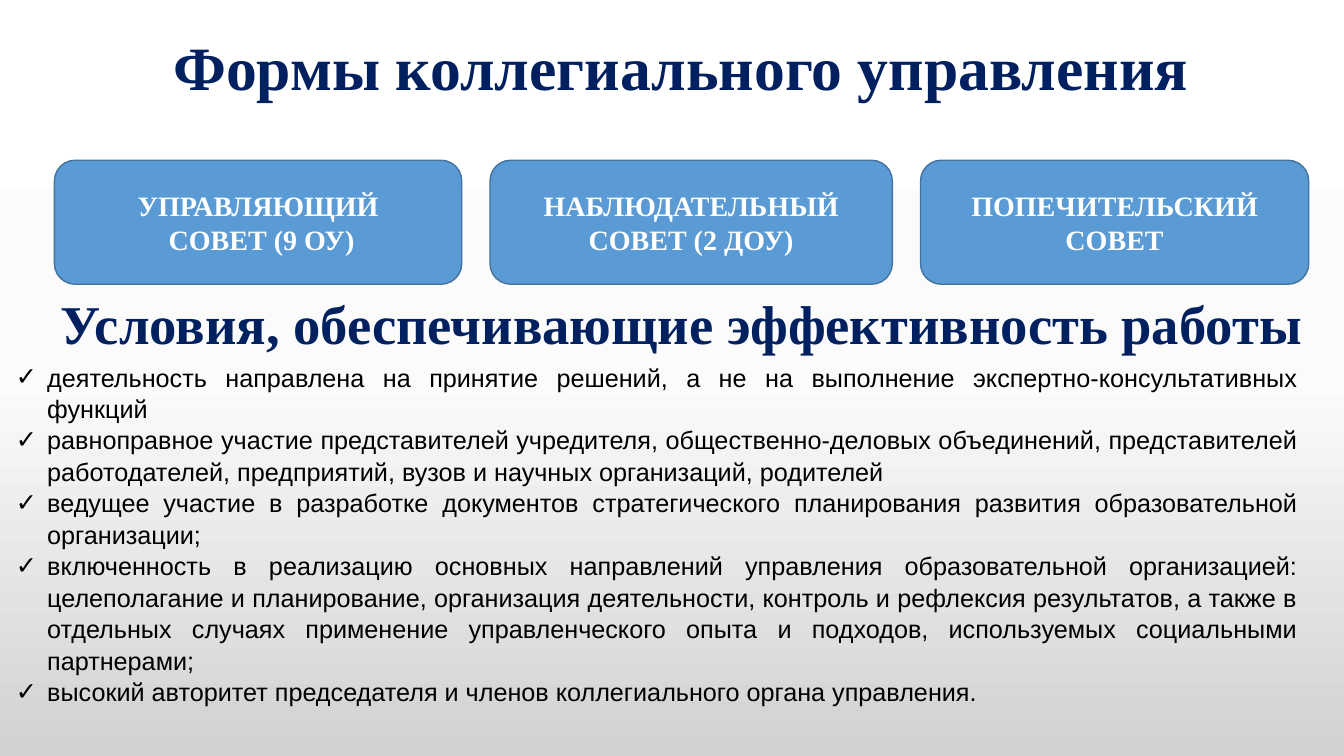
from copy import deepcopy

from lxml.etree import SubElement
from pptx import Presentation
from pptx.dml.color import RGBColor
from pptx.enum.shapes import MSO_SHAPE
from pptx.enum.text import MSO_ANCHOR, PP_ALIGN
from pptx.oxml.ns import qn
from pptx.util import Inches, Pt

COLORS = {
    "navy": "002060",
    "blue": "5B9BD5",
    "outline": "43739E",
    "white": "FFFFFF",
    "black": "000000",
}
BACKGROUND_STOPS = [(0, "FFFFFF"), (0.5, "FBFBFB"), (1, "D1D1D1")]
HEADINGS = [
    ("Формы коллегиального управления", 44, (1.01, 0.12, 11.49, 1.17), MSO_ANCHOR.MIDDLE),
    ("Условия, обеспечивающие эффективность работы", 39, (0.18, 2.95, 13.16, 1.17), MSO_ANCHOR.TOP),
]
COUNCILS = [
    (0.54, 4.04, ["УПРАВЛЯЮЩИЙ", " СОВЕТ (9 ОУ)"]),
    (4.86, 3.99, ["НАБЛЮДАТЕЛЬНЫЙ СОВЕТ (2 ДОУ)"]),
    (9.13, 3.85, ["ПОПЕЧИТЕЛЬСКИЙ", "СОВЕТ"]),
]
CONDITIONS = [
    "деятельность направлена на принятие решений, а не на выполнение "
    "экспертно-консультативных функций",
    "равноправное участие представителей учредителя, общественно-деловых объединений, "
    "представителей работодателей, предприятий, вузов и научных организаций, родителей",
    "ведущее участие в разработке документов стратегического планирования развития "
    "образовательной организации;",
    "включенность в реализацию основных направлений управления образовательной "
    "организацией: целеполагание и планирование, организация деятельности, контроль и "
    "рефлексия результатов, а также в отдельных случаях применение управленческого опыта "
    "и подходов, используемых социальными партнерами;",
    "высокий авторитет председателя и членов коллегиального органа управления.",
]


def write_paragraphs(frame, lines, font_format, color, paragraph_format):
    """Fill a text frame with one formatted paragraph per line."""
    frame.word_wrap = True
    for index, line in enumerate(lines):
        paragraph = frame.paragraphs[0] if index == 0 else frame.add_paragraph()
        for name, value in paragraph_format.items():
            setattr(paragraph, name, value)
        run = paragraph.add_run()
        run.text = line
        for name, value in font_format.items():
            setattr(run.font, name, value)
        run.font.color.rgb = RGBColor.from_string(COLORS[color])


presentation = Presentation()
presentation.slide_width = Inches(13.33)
presentation.slide_height = Inches(7.5)
slide = presentation.slides.add_slide(presentation.slide_layouts[6])

# Background gradient from top to bottom
background = slide.background.fill
background.gradient()
background.gradient_angle = 270
stop_list = slide.element.find(".//" + qn("a:gsLst"))
stop_list.append(deepcopy(stop_list[0]))
for stop, (position, color) in zip(background.gradient_stops, BACKGROUND_STOPS):
    stop.position = position
    stop.color.rgb = RGBColor.from_string(color)

# Headings
for text, size, box, anchor in HEADINGS:
    frame = slide.shapes.add_textbox(*map(Inches, box)).text_frame
    frame.vertical_anchor = anchor
    frame.margin_top = frame.margin_bottom = 0
    write_paragraphs(
        frame, [text], {"name": "Times New Roman", "size": Pt(size), "bold": True}, "navy",
        {"alignment": PP_ALIGN.CENTER, "line_spacing": 0.9},
    )

# Council boxes
for left, width, lines in COUNCILS:
    shape = slide.shapes.add_shape(
        MSO_SHAPE.ROUNDED_RECTANGLE, Inches(left), Inches(1.59), Inches(width), Inches(1.23)
    )
    shape.shadow.inherit = False
    shape.fill.solid()
    shape.fill.fore_color.rgb = RGBColor.from_string(COLORS["blue"])
    shape.line.color.rgb = RGBColor.from_string(COLORS["outline"])
    shape.line.width = Pt(1)
    shape.text_frame.vertical_anchor = MSO_ANCHOR.MIDDLE
    write_paragraphs(
        shape.text_frame, lines, {"name": "Times New Roman", "size": Pt(20), "bold": True},
        "white", {"alignment": PP_ALIGN.CENTER},
    )

# Checklist of conditions
checklist = slide.shapes.add_textbox(Inches(0.06), Inches(3.53), Inches(12.91), Inches(3.57)).text_frame
write_paragraphs(
    checklist, CONDITIONS, {"name": "Arial", "size": Pt(18)}, "black",
    {"alignment": PP_ALIGN.JUSTIFY, "line_spacing": 1.04},
)
checklist.paragraphs[-1].space_after = Pt(14.3)
for paragraph in checklist.paragraphs:
    properties = paragraph._p.get_or_add_pPr()
    properties.set("marL", str(Inches(0.31)))
    properties.set("indent", str(Inches(-0.31)))
    bullet_color = SubElement(properties, qn("a:buClr"))
    SubElement(bullet_color, qn("a:srgbClr"), val=COLORS["black"])
    SubElement(properties, qn("a:buFont"), typeface="Arial")
    SubElement(properties, qn("a:buChar"), char="✓")

presentation.save("out.pptx")
